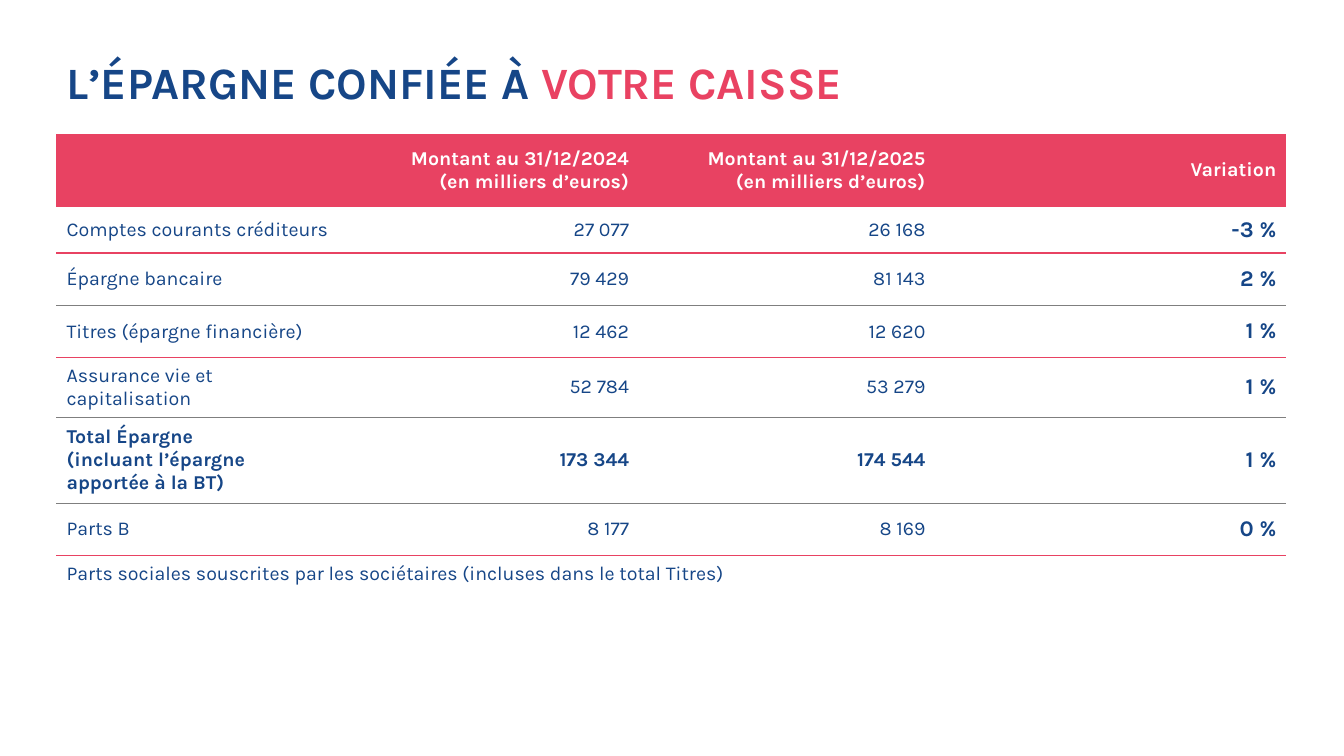
from lxml import etree
from pptx import Presentation
from pptx.dml import color
from pptx.enum import text
from pptx.oxml import ns
from pptx.util import Inches, Pt

FONT = "Karla"
BLUE, PINK, GREY, WHITE = "164687", "E84262", "7F7F7F", "FFFFFF"
NO_STYLE = "{2D5ABB26-0587-4C30-8999-92F81FD0307C}"

COLUMN_WIDTHS = [2.89, 2.89, 2.94, 3.48]
ROW_HEIGHTS = [0.72, 0.46, 0.52, 0.52, 0.59, 0.85, 0.52, 0.37]
HEADINGS = ["", "Montant au 31/12/2024\n(en milliers d’euros)",
            "Montant au 31/12/2025\n(en milliers d’euros)", "Variation"]
TOTAL = "Total Épargne\n(incluant l’épargne\napportée à la BT)"
# Label, 2024, 2025, variation, rule colour, rule width
SAVINGS = [
    ("Comptes courants créditeurs", "27 077", "26 168", "-3 %", PINK, 1),
    ("Épargne bancaire", "79 429", "81 143", "2 %", GREY, 0.5),
    ("Titres (épargne financière)", "12 462", "12 620", "1 %", PINK, 0.5),
    ("Assurance vie et capitalisation", "52 784", "53 279", "1 %", GREY, 0.5),
    (TOTAL, "173 344", "174 544", "1 %", GREY, 0.5),
    ("Parts B", "8 177", "8 169", "0 %", PINK, 1),
]
NOTE = "Parts sociales souscrites par les sociétaires (incluses dans le total Titres)"


def rgb(value):
    return color.RGBColor.from_string(value)


def add_run(p, content, size, fill, bold=False):
    r = p.add_run()
    r.text = content
    r.font.name = FONT
    r.font.size = Pt(size)
    r.font.bold = bold
    r.font.color.rgb = rgb(fill)


def add_title(s, parts):
    sp = s.shapes.title
    sp.left, sp.top = Inches(0.56), Inches(0.52)
    sp.width, sp.height = Inches(10.98), Inches(0.61)
    tf = sp.text_frame
    tf.word_wrap = True
    tf.auto_size = text.MSO_AUTO_SIZE.NONE
    tf.vertical_anchor = text.MSO_ANCHOR.BOTTOM
    p = tf.paragraphs[0]
    p.alignment = text.PP_ALIGN.LEFT
    p.line_spacing = 0.9
    for content, fill in parts:
        add_run(p, content, 32, fill, True)


def fill_cell(cell, content, size=14, fill=BLUE, bold=False, right=False):
    cell.vertical_anchor = text.MSO_ANCHOR.MIDDLE
    tf = cell.text_frame
    for i, line in enumerate(content.split("\n")):
        p = tf.add_paragraph() if i else tf.paragraphs[0]
        p.alignment = text.PP_ALIGN.RIGHT if right else text.PP_ALIGN.LEFT
        if line:
            add_run(p, line, size, fill, bold)


def add_bottom_rule(cell, fill, width):
    ln = etree.Element(ns.qn("a:lnB"), w=str(Pt(width)))
    solid = etree.SubElement(ln, ns.qn("a:solidFill"))
    etree.SubElement(solid, ns.qn("a:srgbClr"), val=fill)
    cell._tc.get_or_add_tcPr().insert(0, ln)


def add_savings_table(s):
    frame = s.shapes.add_table(len(ROW_HEIGHTS), len(COLUMN_WIDTHS), Inches(0.56),
                               Inches(1.33), Inches(12.2), Inches(4.56))
    table = frame.table
    table.first_row = table.horz_banding = False
    table._tbl.tblPr.find(ns.qn("a:tableStyleId")).text = NO_STYLE
    for column, width in zip(table.columns, COLUMN_WIDTHS):
        column.width = Inches(width)
    for row, height in zip(table.rows, ROW_HEIGHTS):
        row.height = Inches(height)

    # Header
    for c, heading in enumerate(HEADINGS):
        cell = table.cell(0, c)
        fill_cell(cell, heading, fill=WHITE, bold=True, right=True)
        cell.fill.solid()
        cell.fill.fore_color.rgb = rgb(PINK)

    # Savings rows
    for r, (*values, rule, width) in enumerate(SAVINGS, 1):
        for c, value in enumerate(values):
            cell = table.cell(r, c)
            variation = c == 3
            fill_cell(cell, value, 16 if variation else 14,
                      bold=variation or values[0] == TOTAL, right=c > 0)
            cell.fill.background()
            add_bottom_rule(cell, rule, width)

    # Note across the full width
    note = table.cell(len(ROW_HEIGHTS) - 1, 0)
    note.merge(table.cell(len(ROW_HEIGHTS) - 1, 3))
    fill_cell(note, NOTE)
    note.fill.background()


def main():
    prs = Presentation()
    prs.slide_width, prs.slide_height = Inches(13.33), Inches(7.5)
    s = prs.slides.add_slide(prs.slide_layouts[5])
    add_title(s, [("L’ÉPARGNE CONFIÉE À ", BLUE), ("VOTRE CAISSE", "E94262")])
    add_savings_table(s)
    prs.save("out.pptx")


if __name__ == "__main__":
    main()
